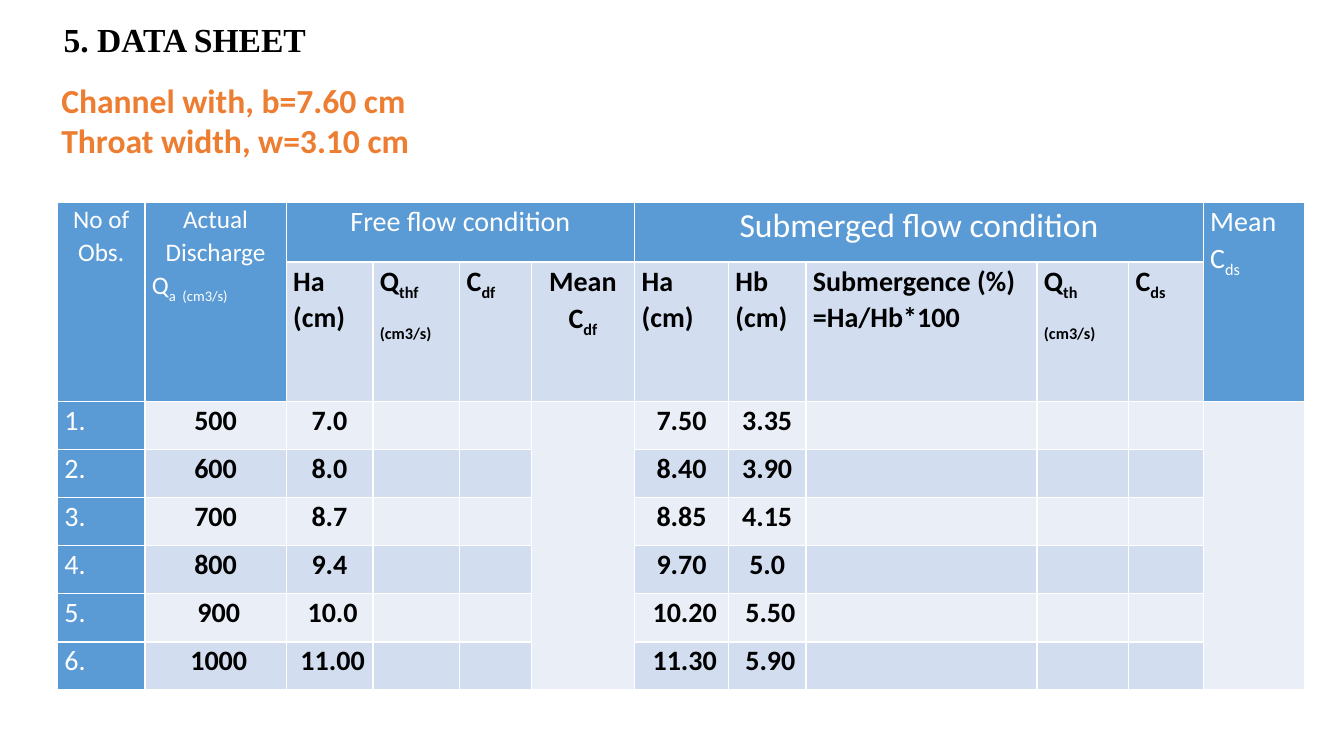
from lxml import etree
from pptx import Presentation
from pptx.dml.color import RGBColor
from pptx.enum import text as t
from pptx.oxml.ns import qn
from pptx.util import Pt

TITLE = "5. DATA SHEET"
SIZES = ["Channel with, b=7.60 cm", "Throat width, w=3.10 cm"]

# An underscore starts a subscript.
# Top heads: row span, column span, font size, lines, centred lines
TOPS = {
    0: (2, 1, 18, ["No of", "Obs."], 2),
    1: (2, 1, 18, ["Actual", "Discharge", "Q_a  (cm3/s)"], 2),
    2: (1, 4, 20, ["Free flow condition"], 1),
    6: (1, 5, 24, ["Submerged flow condition"], 1),
    11: (2, 1, 20, ["Mean", "C_ds"], 0),
}
HEADS = {
    2: ["Ha", "(cm)"],
    3: ["Q_thf", "_(cm3/s)"],
    4: ["C_df"],
    5: ["Mean", "C_df"],
    6: ["Ha", "(cm)"],
    7: ["Hb", "(cm)"],
    8: ["Submergence (%)", "=Ha/Hb*100"],
    9: ["Q_th", "_(cm3/s)"],
    10: ["C_ds"],
}
FIELDS = [0, 1, 2, 6, 7]
DATA = [
    ("1.", "500", "7.0", "7.50", "3.35"),
    ("2.", "600", "8.0", "8.40", "3.90"),
    ("3.", "700", "8.7", "8.85", "4.15"),
    ("4.", "800", "9.4", "9.70", "5.0"),
    ("5.", " 900", " 10.0", " 10.20", " 5.50"),
    ("6.", " 1000", " 11.00", " 11.30", " 5.90"),
]
MEANS = [5, 11]
WIDTHS = [62.6, 100.8, 62, 62, 51, 74, 67, 55.4, 165, 65.5, 53.3, 72.5]
HEIGHTS = [42.5, 99.4] + [34.4] * len(DATA)

BLUE, PALE, MIST = "5B9BD5", "D2DEEF", "EAEFF7"
WHITE, BLACK, ORANGE = "FFFFFF", "000000", "ED7D31"


def color(code):
    return RGBColor.from_string(code)


def write(frame, lines, size, ink, bold, mid=0, font="Calibri", gap=1.07):
    """Fill a text frame, centring its first `mid` lines."""
    for i, line in enumerate(lines):
        para = frame.paragraphs[0] if i == 0 else frame.add_paragraph()
        para.alignment = t.PP_ALIGN.CENTER if i < mid else t.PP_ALIGN.LEFT
        para.line_spacing = gap
        for low, part in enumerate(line.split("_")):
            if not part:
                continue
            run = para.add_run()
            run.text = part
            run.font.name, run.font.size, run.font.bold = font, Pt(size), bold
            run.font.color.rgb = color(ink)
            if low:
                run._r.get_or_add_rPr().set("baseline", "-25000")


def style(cell, fill):
    """Give a cell its margins, white borders and fill."""
    cell.margin_left = cell.margin_right = Pt(5)
    cell.margin_top = cell.margin_bottom = 0
    props = cell._tc.get_or_add_tcPr()
    for side in ("lnL", "lnR", "lnT", "lnB"):
        line = etree.SubElement(props, qn("a:" + side), w=str(Pt(1)))
        solid = etree.SubElement(line, qn("a:solidFill"))
        etree.SubElement(solid, qn("a:srgbClr"), val=WHITE)
    cell.fill.solid()
    cell.fill.fore_color.rgb = color(fill)


def shade(row, col):
    if col == 0 or row == 0 or (row == 1 and col in TOPS and TOPS[col][0] == 2):
        return BLUE
    if row > 1 and (row % 2 == 0 or col in MEANS):
        return MIST
    return PALE


def build_table(slide):
    grid = slide.shapes.add_table(
        len(HEIGHTS), len(WIDTHS), Pt(41), Pt(144.7),
        Pt(sum(WIDTHS)), Pt(sum(HEIGHTS))).table
    grid.first_row = grid.horz_banding = False
    for col, width in enumerate(WIDTHS):
        grid.columns[col].width = Pt(width)
    for row, height in enumerate(HEIGHTS):
        grid.rows[row].height = Pt(height)
        for col in range(len(WIDTHS)):
            style(grid.cell(row, col), shade(row, col))

    for col, (down, wide, size, lines, mid) in TOPS.items():
        cell = grid.cell(0, col)
        cell.merge(grid.cell(down - 1, col + wide - 1))
        write(cell.text_frame, lines, size, WHITE, False, mid)
    for col, lines in HEADS.items():
        mid = len(lines) if col in MEANS else 0
        write(grid.cell(1, col).text_frame, lines, 20, BLACK, True, mid)
    for row, values in enumerate(DATA, 2):
        for col, value in zip(FIELDS, values):
            first = col == 0
            write(grid.cell(row, col).text_frame, [value], 20,
                  WHITE if first else BLACK, not first, 0 if first else 1)
    for col in MEANS:
        grid.cell(2, col).merge(grid.cell(len(HEIGHTS) - 1, col))


def main():
    deck = Presentation()
    deck.slide_width, deck.slide_height = Pt(960), Pt(540)
    slide = deck.slides.add_slide(deck.slide_layouts[5])

    title = slide.shapes.title
    title.left, title.top, title.width, title.height = (
        Pt(38.2), Pt(10), Pt(189.4), Pt(36))
    frame = title.text_frame
    frame.word_wrap = False
    frame.auto_size = t.MSO_AUTO_SIZE.SHAPE_TO_FIT_TEXT
    frame.vertical_anchor = t.MSO_ANCHOR.TOP
    write(frame, [TITLE], 24, BLACK, True, font="Times New Roman", gap=1.0)

    build_table(slide)

    box = slide.shapes.add_textbox(Pt(36.7), Pt(53.3), Pt(404.6), Pt(65.5))
    box.text_frame.word_wrap = True
    write(box.text_frame, SIZES, 24, ORANGE, True, gap=1.0)
    deck.save("out.pptx")


if __name__ == "__main__":
    main()
